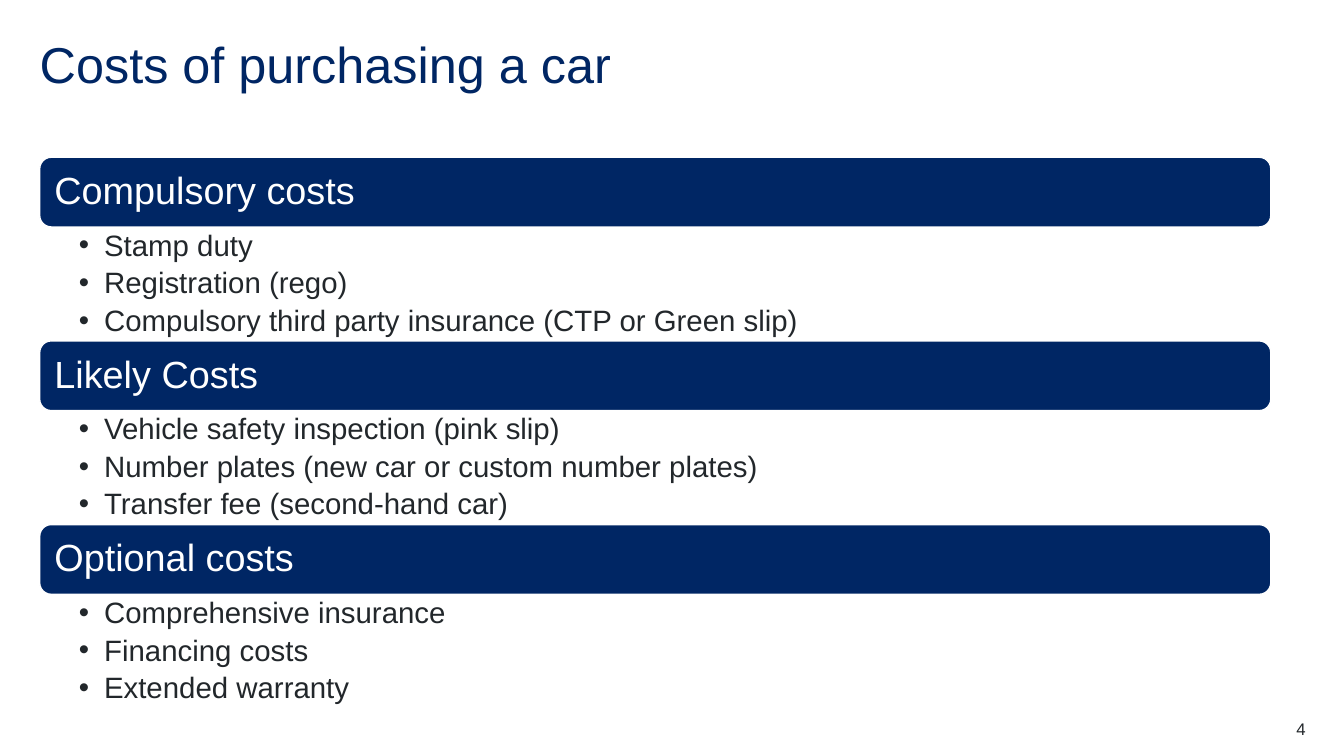
from lxml import etree
from pptx import Presentation
from pptx.dml.color import RGBColor
from pptx.enum import shapes, text
from pptx.oxml.ns import qn
from pptx.util import Pt

TITLE = "Costs of purchasing a car"
PAGE = "4"
COSTS = [
    ("Compulsory costs", ["Stamp duty", "Registration (rego)",
                          "Compulsory third party insurance (CTP or Green slip)"]),
    ("Likely Costs", ["Vehicle safety inspection (pink slip)",
                      "Number plates (new car or custom number plates)",
                      "Transfer fee (second-hand car)"]),
    ("Optional costs", ["Comprehensive insurance", "Financing costs",
                        "Extended warranty"]),
]
NAVY, INK, WHITE = "002664", "22272B", "FFFFFF"
LEFT, TOP, WIDE = 28.35, 112.3, 879.4
BAR, LIST = 49.8, 81.4


def color(code):
    return RGBColor.from_string(code)


def frame(shape, pads, anchor):
    """Set wrapping, margins (left, top, right, bottom) and anchor."""
    body = shape.text_frame
    body.word_wrap = True
    body.auto_size = text.MSO_AUTO_SIZE.NONE
    body.margin_left, body.margin_top, body.margin_right, body.margin_bottom = map(Pt, pads)
    body.vertical_anchor = anchor
    return body


def write(para, words, size, code, align=text.PP_ALIGN.LEFT):
    para.alignment = align
    para.line_spacing = 0.9
    run = para.add_run()
    run.text = words
    run.font.name = "Arial"
    run.font.size = Pt(size)
    run.font.color.rgb = color(code)


def bullet(para):
    props = para._p.get_or_add_pPr()
    props.set("marL", str(Pt(18)))
    props.set("indent", str(-Pt(18)))
    etree.SubElement(props, qn("a:buFont")).set("typeface", "Arial")
    etree.SubElement(props, qn("a:buChar")).set("char", "•")


def place(x, y, w, h):
    return Pt(x), Pt(y), Pt(w), Pt(h)


def panel(x, y, w, h):
    """Add a clear rectangular outline that holds a list."""
    x, y, w, h = place(x, y, w, h)
    pen = slide.shapes.build_freeform(x, y)
    pen.add_line_segments([(x + w, y), (x + w, y + h), (x, y + h)])
    shape = pen.convert_to_shape()
    shape.shadow.inherit = False
    shape.fill.background()
    shape.line.fill.background()
    return shape


deck = Presentation()
deck.slide_width, deck.slide_height = Pt(960), Pt(540)
slide = deck.slides.add_slide(deck.slide_layouts[5])
middle, top = text.MSO_ANCHOR.MIDDLE, text.MSO_ANCHOR.TOP

title = slide.shapes.title
title.left, title.top, title.width, title.height = place(LEFT, LEFT, 904, 43.2)
write(frame(title, [0] * 4, top).paragraphs[0], TITLE, 36, NAVY)

for row, (head, items) in enumerate(COSTS):
    y = TOP + row * (BAR + LIST)
    bar = slide.shapes.add_shape(shapes.MSO_SHAPE.ROUNDED_RECTANGLE,
                                 *place(LEFT, y, WIDE, BAR))
    bar.shadow.inherit = False
    bar.fill.solid()
    bar.fill.fore_color.rgb = color(NAVY)
    bar.line.color.rgb = color(WHITE)
    bar.line.width = Pt(1)
    write(frame(bar, [8.1] * 4, middle).paragraphs[0], head, 27, WHITE)

    box = panel(LEFT, y + BAR, WIDE, LIST)
    body = frame(box, [28, 2.7, 15, 2.7], top)
    for n, item in enumerate(items):
        para = body.add_paragraph() if n else body.paragraphs[0]
        bullet(para)
        para.space_after = Pt(4.2)
        write(para, item, 21, INK)

page = slide.shapes.add_textbox(*place(876, 513.4, 56.7, 14.4))
para = frame(page, [0] * 4, middle).paragraphs[0]
write(para, PAGE, 12, INK, text.PP_ALIGN.RIGHT)
para.line_spacing = 1.0

deck.save("out.pptx")
